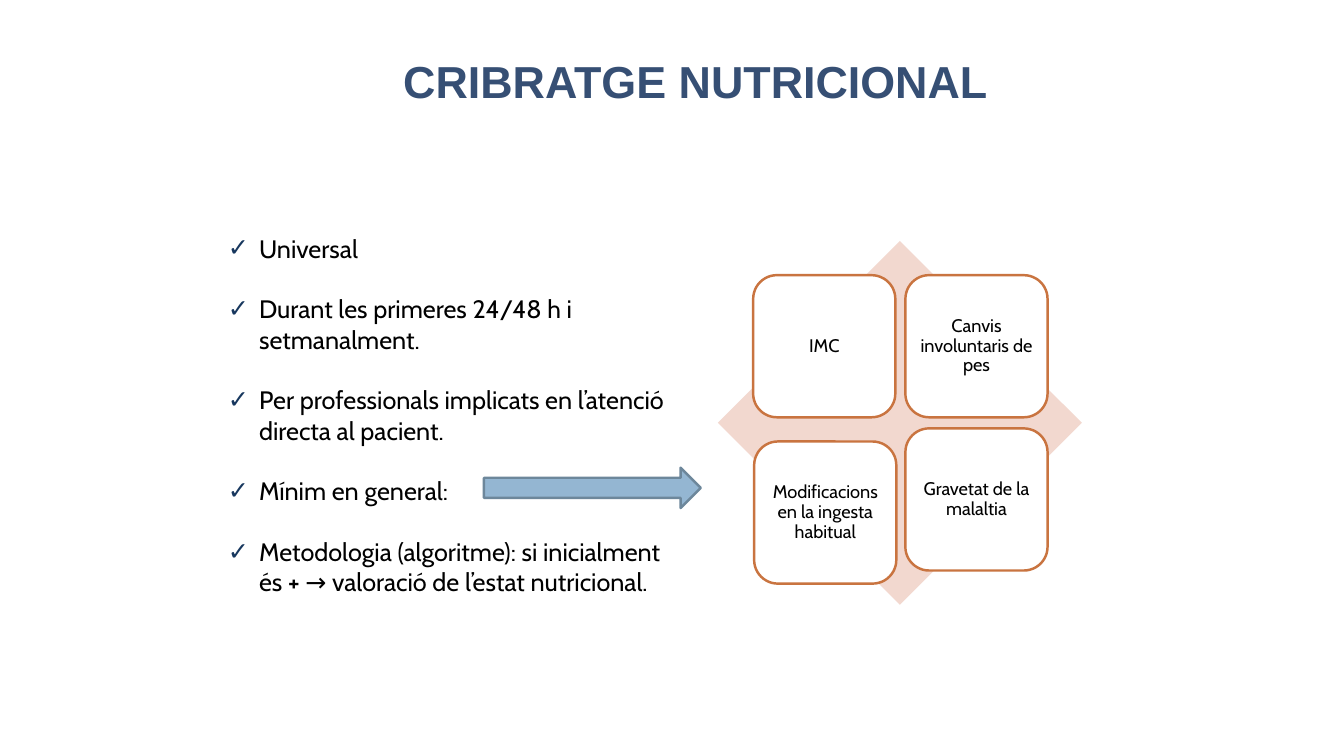
import pptx
import pptx.util
import pptx.dml.color
import pptx.enum.shapes
import pptx.enum.text
import lxml.etree
from dataclasses import dataclass

Inches = pptx.util.Inches
Pt = pptx.util.Pt
Kind = pptx.enum.shapes.MSO_SHAPE
Align = pptx.enum.text.PP_ALIGN
Anchor = pptx.enum.text.MSO_ANCHOR

TITLE = "CRIBRATGE NUTRICIONAL"
POINTS = [
    [("Universal", False)],
    [("Durant les primeres 24/48 h i setmanalment.", False)],
    [("Per professionals implicats en l’atenció directa al pacient.", False)],
    [("Mínim en general:", False)],
    [
        ("Metodologia (algoritme): si inicialment és ", False),
        ("+", True),
        (" → valoració de l’estat nutricional.", False),
    ],
]
CARDS = [
    ("IMC", 7.47, 2.73),
    ("Canvis involuntaris de pes", 8.98, 2.73),
    ("Modificacions en la ingesta habitual", 7.48, 4.38),
    ("Gravetat de la malaltia", 8.98, 4.25),
]
SIDE = 1.41


@dataclass(frozen=True)
class Theme:
    head: str = "Arial"
    body: str = "Cabin"
    navy: str = "364F74"
    check: str = "17375E"
    ink: str = "000000"
    white: str = "FFFFFF"
    pink: str = "F2D8CF"
    rust: str = "C97440"
    blue: str = "94B6D2"
    slate: str = "6D879B"
    big: float = 32
    text: float = 18
    small: float = 13
    line: float = 1.75


theme = Theme()


def rgb(code):
    return pptx.dml.color.RGBColor.from_string(code)


def place(shape, *box):
    shape.left, shape.top, shape.width, shape.height = map(Inches, box)


def style(para, name, size, color, bold=False):
    font = para.font
    font.name, font.size, font.bold = name, Pt(size), bold
    font.color.rgb = rgb(color)


def draw(slide, kind, box, fill, line=None):
    shape = slide.shapes.add_shape(kind, *map(Inches, box))
    shape.shadow.inherit = False
    shape.fill.solid()
    shape.fill.fore_color.rgb = rgb(fill)
    if line:
        shape.line.color.rgb = rgb(line)
        shape.line.width = Pt(theme.line)
    else:
        shape.line.fill.background()
    return shape


def tick(para):
    props = para._p.get_or_add_pPr()
    props.set("marL", str(Inches(0.31)))
    props.set("indent", str(-Inches(0.31)))
    tag = pptx.oxml.ns.qn
    color = lxml.etree.SubElement(props, tag("a:buClr"))
    lxml.etree.SubElement(color, tag("a:srgbClr"), val=theme.check)
    lxml.etree.SubElement(props, tag("a:buFont"), typeface=theme.head)
    lxml.etree.SubElement(props, tag("a:buChar"), char="✓")


def add_title(slide):
    title = slide.shapes.title
    place(title, 0.6, 0.36, 12.6, 0.87)
    title.text = TITLE
    title.text_frame.vertical_anchor = Anchor.MIDDLE
    para = title.text_frame.paragraphs[0]
    para.alignment = Align.CENTER
    style(para, theme.head, theme.big, theme.navy, True)


def add_list(slide):
    body = slide.placeholders[1]
    place(body, 2.16, 2.26, 4.67, 3.74)
    frame = body.text_frame
    frame.auto_size = pptx.enum.text.MSO_AUTO_SIZE.NONE
    for i, point in enumerate(POINTS):
        para = frame.add_paragraph() if i else frame.paragraphs[0]
        para.space_before = Pt(0)
        para.space_after = Pt(21.8)
        tick(para)
        style(para, theme.body, theme.text, theme.ink)
        for text, bold in point:
            run = para.add_run()
            run.text = text
            if bold:
                run.font.bold = True


def add_card(slide, text, left, top):
    box = (left, top, SIDE, SIDE)
    card = draw(slide, Kind.ROUNDED_RECTANGLE, box, theme.white, theme.rust)
    frame = card.text_frame
    frame.word_wrap = True
    frame.vertical_anchor = Anchor.MIDDLE
    frame.margin_left = frame.margin_right = Inches(0.05)
    frame.margin_top = frame.margin_bottom = Inches(0.05)
    para = frame.paragraphs[0]
    para.text = text
    para.alignment = Align.CENTER
    para.line_spacing = 0.9
    style(para, theme.body, theme.small, theme.ink)


def main():
    deck = pptx.Presentation()
    deck.slide_width, deck.slide_height = Inches(13.33), Inches(7.5)
    slide = deck.slides.add_slide(deck.slide_layouts[1])
    add_title(slide)
    draw(slide, Kind.DIAMOND, (7.12, 2.39, 3.61, 3.61), theme.pink)
    for card in CARDS:
        add_card(slide, *card)
    add_list(slide)
    draw(slide, Kind.RIGHT_ARROW, (4.8, 4.64, 2.15, 0.4), theme.blue, theme.slate)
    deck.save("out.pptx")


if __name__ == "__main__":
    main()
